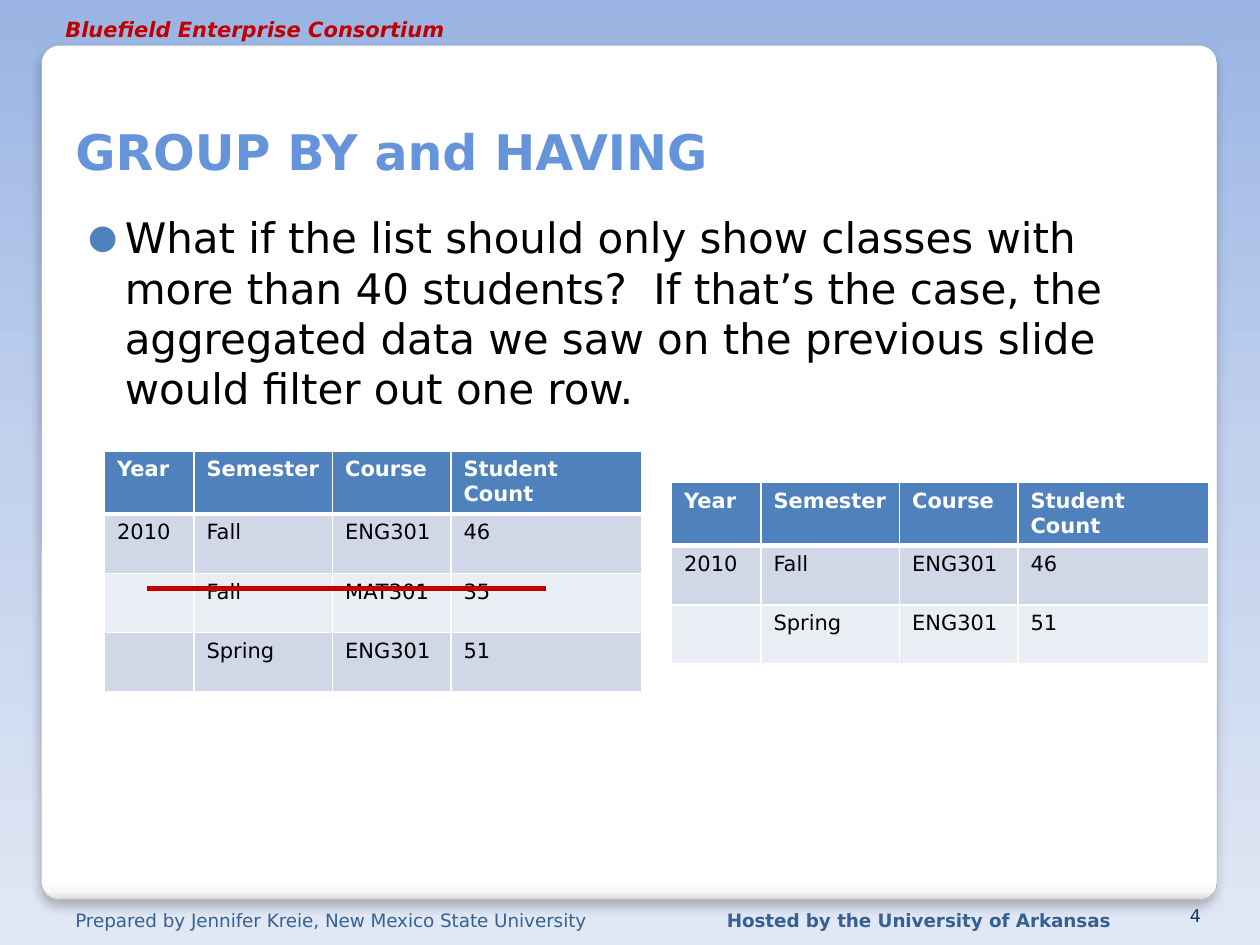
from dataclasses import dataclass

from lxml import etree
from pptx import Presentation
from pptx import util as u
from pptx.dml.color import RGBColor
from pptx.enum import shapes, text
from pptx.oxml import ns

FONT = "DejaVu Sans"
WHITE = RGBColor(0xFF, 0xFF, 0xFF)
BLACK = RGBColor(0, 0, 0)
RED = RGBColor(0xC0, 0, 0)
BLUE = RGBColor(0x4F, 0x81, 0xBD)
TITLE_BLUE = RGBColor(0x65, 0x94, 0xDA)
FOOTER_BLUE = RGBColor(0x37, 0x60, 0x92)
NUMBER_BLUE = RGBColor(0x17, 0x37, 0x5E)
PANEL_EDGE = RGBColor(0xA4, 0xA4, 0xA4)
DARK_BAND = RGBColor(0xD0, 0xD8, 0xE8)
LIGHT_BAND = RGBColor(0xE9, 0xED, 0xF4)
SKY = [
    (0, RGBColor(0x9A, 0xB5, 0xE4)),
    (50, RGBColor(0xC2, 0xD1, 0xED)),
    (100, RGBColor(0xE1, 0xE8, 0xF5)),
]
PANEL = [
    (0, WHITE),
    (98, WHITE),
    (99, RGBColor(0xF7, 0xF7, 0xF7)),
    (100, RGBColor(0xDA, 0xDA, 0xDA)),
]
COLUMN_WIDTHS = (0.71, 1.1, 0.94, 1.51)
HEADER_HEIGHT, ROW_HEIGHT = 0.46, 0.47
HEADINGS = ("Year", "Semester", "Course", "Student Count")


@dataclass
class Label:
    words: str
    box: tuple[float, float, float, float]
    font: dict
    anchor: text.MSO_ANCHOR = text.MSO_ANCHOR.TOP
    align: text.PP_ALIGN = text.PP_ALIGN.LEFT
    margins: tuple[float, float, float, float] = (0.1, 0.05, 0.1, 0.05)


@dataclass
class ClassList:
    left: float
    top: float
    rows: list[tuple[str, ...]]


LABELS = [
    Label("Prepared by Jennifer Kreie, New Mexico State University",
          (0.5, 7.17, 4.46, 0.23), dict(size=u.Pt(10.5), color=FOOTER_BLUE)),
    Label("Hosted by the University of Arkansas",
          (5.67, 7.17, 3.33, 0.23), dict(size=u.Pt(10.5), color=FOOTER_BLUE, bold=True)),
    Label("Bluefield Enterprise Consortium",
          (0.42, 0.08, 3.33, 0.23), dict(size=u.Pt(12), color=RED, bold=True, italic=True)),
    Label("GROUP BY and HAVING",
          (0.5, 0.33, 8.95, 1.15), dict(size=u.Pt(28), color=TITLE_BLUE, bold=True),
          anchor=text.MSO_ANCHOR.BOTTOM),
    Label("4", (9.13, 7.17, 0.5, 0.23), dict(size=u.Pt(10), color=NUMBER_BLUE),
          anchor=text.MSO_ANCHOR.BOTTOM, align=text.PP_ALIGN.RIGHT),
]
QUESTION = Label(
    "What if the list should only show classes with more than 40 students?  "
    "If that’s the case, the aggregated data we saw on the previous slide "
    "would filter out one row.",
    (0.5, 1.58, 8.95, 5), dict(size=u.Pt(24), color=BLACK),
    margins=(0.2, 0.1, 0.1, 0.05))

FALL_ENGLISH = ("2010", "Fall", "ENG301", "46")
FALL_MATH = ("", "Fall", "MAT301", "35")
SPRING_ENGLISH = ("", "Spring", "ENG301", "51")
CLASS_LISTS = [
    ClassList(0.83, 3.58, [FALL_ENGLISH, FALL_MATH, SPRING_ENGLISH]),
    ClassList(5.33, 3.83, [FALL_ENGLISH, SPRING_ENGLISH]),
]


def add_node(parent, tag: str, **attributes):
    values = {key: str(value) for key, value in attributes.items()}
    return etree.SubElement(parent, ns.qn(tag), values)


def set_gradient(owner, stops: list) -> None:
    gradient = owner.find(".//" + ns.qn("a:gradFill"))
    for child in list(gradient):
        gradient.remove(child)
    stop_list = add_node(gradient, "a:gsLst")
    for percent, color in stops:
        stop = add_node(stop_list, "a:gs", pos=percent * 1000)
        add_node(stop, "a:srgbClr", val=color)
    add_node(gradient, "a:lin", ang=5400000, scaled=0)


def format_font(font, values: dict) -> None:
    font.name = FONT
    for name, value in values.items():
        if name == "color":
            font.color.rgb = value
        else:
            setattr(font, name, value)


def add_panel(slide) -> None:
    panel = slide.shapes.add_shape(
        shapes.MSO_SHAPE.ROUNDED_RECTANGLE, *map(u.Inches, (0.33, 0.36, 9.33, 6.78)))
    panel.adjustments[0] = 0.021
    panel.fill.gradient()
    set_gradient(panel._element.spPr, PANEL)
    panel.line.color.rgb = PANEL_EDGE
    panel.line.width = u.Pt(0.16)
    panel.shadow.inherit = False
    effects = panel._element.spPr.find(ns.qn("a:effectLst"))
    shadow = add_node(effects, "a:outerShdw", blurRad=u.Pt(6), dist=u.Pt(4),
                      dir=5400000, algn="t", rotWithShape=0)
    add_node(add_node(shadow, "a:srgbClr", val=BLACK), "a:alpha", val=25000)


def add_label(slide, label: Label):
    frame = slide.shapes.add_textbox(*map(u.Inches, label.box)).text_frame
    frame.word_wrap = True
    frame.vertical_anchor = label.anchor
    for side, margin in zip(("left", "top", "right", "bottom"), label.margins):
        setattr(frame, f"margin_{side}", u.Inches(margin))
    paragraph = frame.paragraphs[0]
    paragraph.alignment = label.align
    run = paragraph.add_run()
    run.text = label.words
    format_font(run.font, label.font)
    return paragraph


def add_bullet(paragraph) -> None:
    paragraph.space_before = u.Pt(2.5)
    properties = paragraph._p.get_or_add_pPr()
    properties.set("marL", str(u.Inches(0.29)))
    properties.set("indent", str(-u.Inches(0.29)))
    add_node(add_node(properties, "a:buClr"), "a:srgbClr", val=BLUE)
    add_node(properties, "a:buSzPct", val=80000)
    add_node(properties, "a:buFont", typeface=FONT)
    add_node(properties, "a:buChar", char="●")


def add_borders(cell, top: float, bottom: float) -> None:
    properties = cell._tc.get_or_add_tcPr()
    for side, width in dict(L=1, R=1, T=top, B=bottom).items():
        border = add_node(properties, f"a:ln{side}", w=u.Pt(width))
        add_node(add_node(border, "a:solidFill"), "a:srgbClr", val=WHITE)


def add_class_list(slide, classes: ClassList) -> None:
    lines = [HEADINGS, *classes.rows]
    heights = [HEADER_HEIGHT] + [ROW_HEIGHT] * len(classes.rows)
    table = slide.shapes.add_table(
        len(lines), len(HEADINGS), u.Inches(classes.left), u.Inches(classes.top),
        u.Inches(sum(COLUMN_WIDTHS)), u.Inches(sum(heights))).table
    for column, width in zip(table.columns, COLUMN_WIDTHS):
        column.width = u.Inches(width)
    for index, (line, height) in enumerate(zip(lines, heights)):
        table.rows[index].height = u.Inches(height)
        is_header = index == 0
        band = BLUE if is_header else DARK_BAND if index % 2 else LIGHT_BAND
        font = dict(size=u.Pt(12), bold=is_header, color=WHITE if is_header else BLACK)
        for position, words in enumerate(line):
            cell = table.cell(index, position)
            add_borders(cell, top=3 if index == 1 else 1, bottom=3 if is_header else 1)
            cell.fill.solid()
            cell.fill.fore_color.rgb = band
            if words:
                run = cell.text_frame.paragraphs[0].add_run()
                run.text = words
                format_font(run.font, font)


def add_strike(slide) -> None:
    strike = slide.shapes.add_connector(
        shapes.MSO_CONNECTOR.STRAIGHT, *map(u.Inches, (1.17, 4.67, 4.33, 4.67)))
    strike.line.color.rgb = RED
    strike.line.width = u.Pt(3)
    add_node(strike._element.spPr, "a:effectLst")


def main() -> None:
    deck = Presentation()
    deck.slide_width, deck.slide_height = u.Inches(10), u.Inches(7.5)
    slide = deck.slides.add_slide(deck.slide_layouts[6])
    slide.background.fill.gradient()
    set_gradient(slide._element, SKY)
    add_panel(slide)
    for label in LABELS:
        add_label(slide, label)
    add_bullet(add_label(slide, QUESTION))
    for classes in CLASS_LISTS:
        add_class_list(slide, classes)
    add_strike(slide)
    deck.save("out.pptx")


if __name__ == "__main__":
    main()
